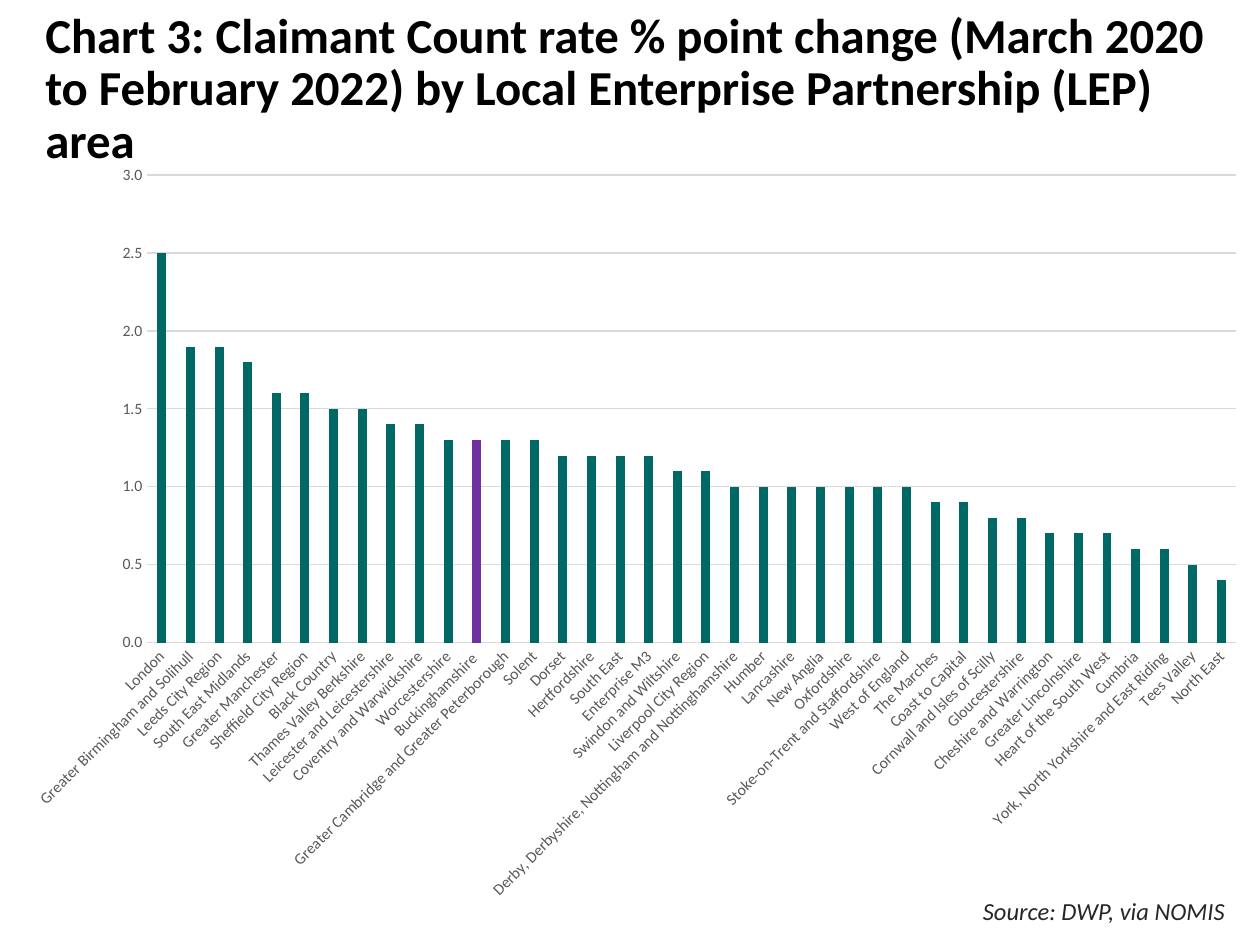
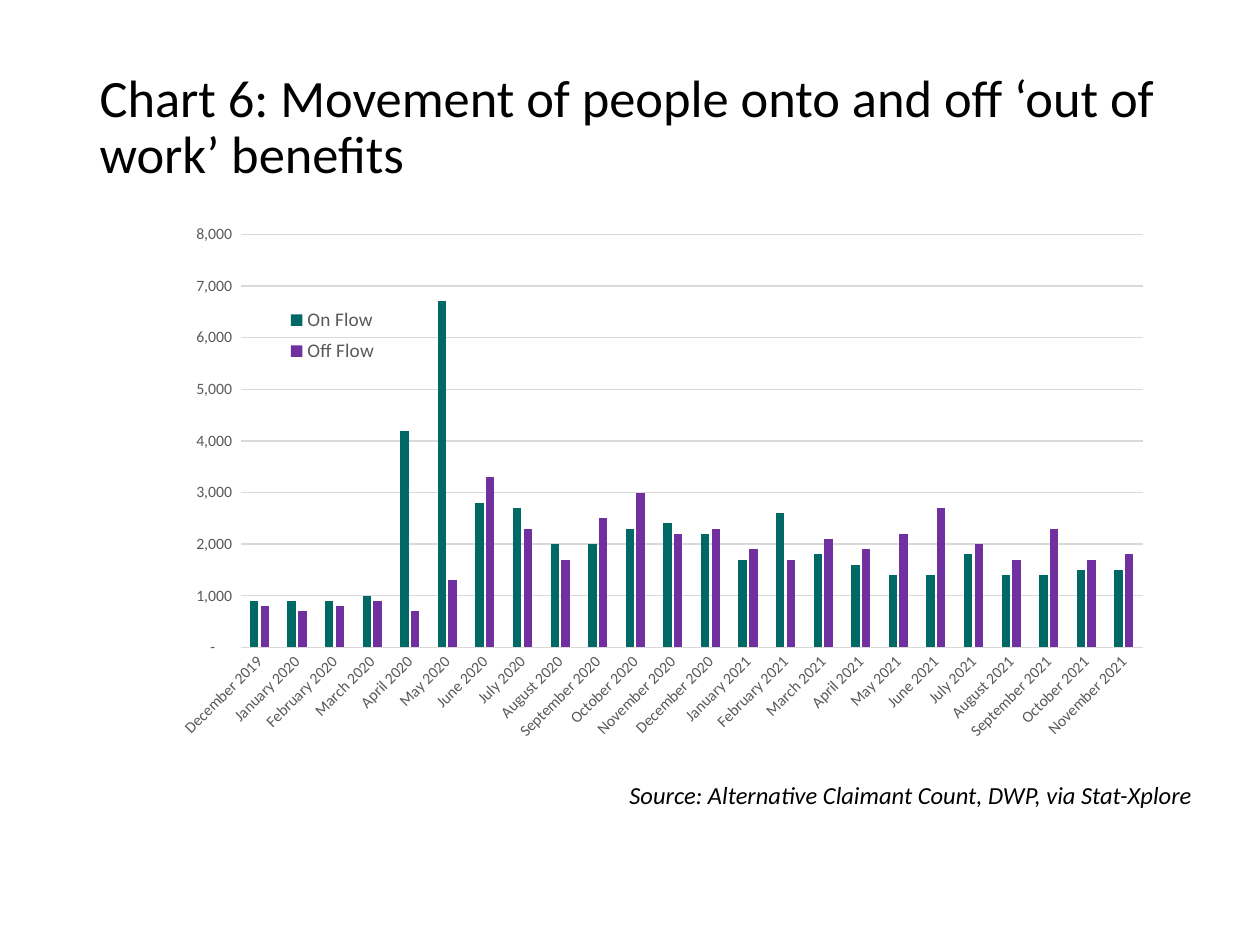
from lxml.etree import SubElement
from pptx import Presentation
from pptx.chart.data import CategoryChartData
from pptx.dml.color import RGBColor
from pptx.enum.chart import XL_CHART_TYPE, XL_LEGEND_POSITION, XL_TICK_MARK
from pptx.enum.text import MSO_ANCHOR, MSO_AUTO_SIZE, PP_ALIGN
from pptx.oxml import parse_xml
from pptx.oxml.ns import nsdecls, qn
from pptx.util import Inches, Pt

FONT = "Calibri"
COLORS = {
    "black": "000000",
    "source": "262626",
    "axis_text": "595959",
    "grid": "D9D9D9",
    "teal": "006965",
    "purple": "7030A0",
}
SERIES_COLORS = ["teal", "purple"]

AREA_RATES = {
    "London": 2.5,
    "Greater Birmingham and Solihull": 1.9,
    "Leeds City Region": 1.9,
    "South East Midlands": 1.8,
    "Greater Manchester": 1.6,
    "Sheffield City Region": 1.6,
    "Black Country": 1.5,
    "Thames Valley Berkshire": 1.5,
    "Leicester and Leicestershire": 1.4,
    "Coventry and Warwickshire": 1.4,
    "Worcestershire": 1.3,
    "Buckinghamshire ": 1.3,
    "Greater Cambridge and Greater Peterborough": 1.3,
    "Solent": 1.3,
    "Dorset": 1.2,
    "Hertfordshire": 1.2,
    "South East": 1.2,
    "Enterprise M3": 1.2,
    "Swindon and Wiltshire": 1.1,
    "Liverpool City Region": 1.1,
    "Derby, Derbyshire, Nottingham and Nottinghamshire": 1.0,
    "Humber": 1.0,
    "Lancashire": 1.0,
    "New Anglia": 1.0,
    "Oxfordshire": 1.0,
    "Stoke-on-Trent and Staffordshire": 1.0,
    "West of England": 1.0,
    "The Marches": 0.9,
    "Coast to Capital": 0.9,
    "Cornwall and Isles of Scilly": 0.8,
    "Gloucestershire": 0.8,
    "Cheshire and Warrington": 0.7,
    "Greater Lincolnshire": 0.7,
    "Heart of the South West": 0.7,
    "Cumbria": 0.6,
    "York, North Yorkshire and East Riding": 0.6,
    "Tees Valley": 0.5,
    "North East": 0.4,
}

MONTH_NAMES = ["January", "February", "March", "April", "May", "June", "July",
               "August", "September", "October", "November", "December"]
MONTHS = ["December 2019"]
MONTHS += [f"{month} {year}" for year in (2020, 2021) for month in MONTH_NAMES][:-1]
ON_FLOW = [900, 900, 900, 1000, 4200, 6700, 2800, 2700, 2000, 2000, 2300, 2400,
           2200, 1700, 2600, 1800, 1600, 1400, 1400, 1800, 1400, 1400, 1500, 1500]
OFF_FLOW = [800, 700, 800, 900, 700, 1300, 3300, 2300, 1700, 2500, 3000, 2200,
            2300, 1900, 1700, 2100, 1900, 2200, 2700, 2000, 1700, 2300, 1700, 1800]

CHART_SLIDES = [
    {
        "title": "Chart 3: Claimant Count rate % point change (March 2020 to February 2022) "
                 "by Local Enterprise Partnership (LEP) area",
        "title_box": (0.26, 0.45, 9.48, 1.02),
        "title_format": {"size": 27.9, "bold": True},
        "title_bottom": 0.54,
        "source": "Source: DWP, via NOMIS",
        "source_box": (7.44, 7.06, 2.38, 0.34),
        "source_color": "source",
        "chart_box": (0.09, 1.19, 9.91, 6.07),
        "plot_box": (1.17, 1.39, 8.64, 3.71),
        "legend_box": None,
        "categories": list(AREA_RATES),
        "series": {"Series 1": list(AREA_RATES.values())},
        "highlight": "Buckinghamshire ",
        "scale": (3, 0.5),
        "number_format": "#,##0.0",
    },
    {
        "title": "Chart 6: Movement of people onto and off ‘out of work’ benefits",
        "title_box": (0.69, 0.51, 8.62, 1.02),
        "title_format": {"size": 30},
        "title_bottom": 0.05,
        "source": "Source: Alternative Claimant Count, DWP, via Stat-Xplore",
        "source_box": (4.51, 6.14, 5.05, 0.34),
        "source_color": "black",
        "chart_box": (1.28, 1.7, 7.95, 4.61),
        "plot_box": (1.91, 1.86, 7.16, 3.28),
        "legend_box": (2.24, 2.39, 0.8, 0.55),
        "categories": MONTHS,
        "series": {"On Flow": ON_FLOW, "Off Flow": OFF_FLOW},
        "highlight": None,
        "scale": (8000, 1000),
        "number_format": '_-* #,##0_-;\\-* #,##0_-;_-* "-"??_-;_-@_',
    },
]


def write_text(text_frame, text, size, color="black", bold=False, italic=False,
               align=PP_ALIGN.LEFT, line_spacing=1.0):
    text_frame.word_wrap = True
    paragraph = text_frame.paragraphs[0]
    paragraph.alignment = align
    paragraph.line_spacing = line_spacing
    paragraph.space_before = Pt(0)
    run = paragraph.add_run()
    run.text = text
    run.font.name = FONT
    run.font.size = Pt(size)
    run.font.bold = bold
    run.font.italic = italic
    run.font.color.rgb = RGBColor.from_string(COLORS[color])


def manual_layout(box, chart_box, inner=False):
    left, top, width, height = box
    chart_left, chart_top, chart_width, chart_height = chart_box
    layout = parse_xml(f"<c:layout {nsdecls('c')}><c:manualLayout/></c:layout>")
    values = {"layoutTarget": "inner"} if inner else {}
    values.update({
        "xMode": "edge",
        "yMode": "edge",
        "x": (left - chart_left) / chart_width,
        "y": (top - chart_top) / chart_height,
        "w": width / chart_width,
        "h": height / chart_height,
    })
    for name, value in values.items():
        SubElement(layout[0], qn(f"c:{name}")).set("val", str(value))
    return layout


presentation = Presentation()
presentation.slide_width = Inches(10)
presentation.slide_height = Inches(7.5)
title_only = presentation.slide_layouts[5]

for content in CHART_SLIDES:
    slide = presentation.slides.add_slide(title_only)

    title = slide.shapes.title
    title.left, title.top, title.width, title.height = map(Inches, content["title_box"])
    title.text_frame.auto_size = MSO_AUTO_SIZE.NONE
    title.text_frame.vertical_anchor = MSO_ANCHOR.MIDDLE
    title.text_frame.margin_bottom = Inches(content["title_bottom"])
    write_text(title.text_frame, content["title"], line_spacing=0.9, **content["title_format"])

    source = slide.shapes.add_textbox(*map(Inches, content["source_box"]))
    write_text(source.text_frame, content["source"], 14, color=content["source_color"],
               italic=True, align=PP_ALIGN.RIGHT)

    chart_data = CategoryChartData()
    chart_data.categories = content["categories"]
    for name, values in content["series"].items():
        chart_data.add_series(name, values)
    chart = slide.shapes.add_chart(XL_CHART_TYPE.COLUMN_CLUSTERED,
                                   *map(Inches, content["chart_box"]), chart_data).chart
    chart.has_title = False
    chart.has_legend = content["legend_box"] is not None
    chart.font.name = FONT
    chart.font.size = Pt(10)
    chart.font.color.rgb = RGBColor.from_string(COLORS["black"])

    plot = chart.plots[0]
    plot.gap_width = 219
    plot.overlap = -27
    plot.vary_by_categories = False
    for series, color in zip(plot.series, SERIES_COLORS):
        series.invert_if_negative = False
        series.format.fill.solid()
        series.format.fill.fore_color.rgb = RGBColor.from_string(COLORS[color])
    if content["highlight"]:
        bar = plot.series[0].points[content["categories"].index(content["highlight"])]
        bar.format.fill.solid()
        bar.format.fill.fore_color.rgb = RGBColor.from_string(COLORS["purple"])

    category_axis, value_axis = chart.category_axis, chart.value_axis
    value_axis.minimum_scale = 0
    value_axis.maximum_scale, value_axis.major_unit = content["scale"]
    value_axis.tick_labels.number_format = content["number_format"]
    value_axis.tick_labels.number_format_is_linked = False
    value_axis.format.line.fill.background()
    value_axis.has_major_gridlines = True
    for line in (category_axis.format.line, value_axis.major_gridlines.format.line):
        line.width = Pt(0.75)
        line.color.rgb = RGBColor.from_string(COLORS["grid"])

    label_fonts = [(category_axis.tick_labels.font, 9), (value_axis.tick_labels.font, 9)]
    if chart.has_legend:
        chart.legend.position = XL_LEGEND_POSITION.BOTTOM
        chart.legend.include_in_layout = False
        label_fonts.append((chart.legend.font, 11))
    for font, size in label_fonts:
        font.name = FONT
        font.size = Pt(size)
        font.color.rgb = RGBColor.from_string(COLORS["axis_text"])
    for axis in (category_axis, value_axis):
        axis.major_tick_mark = XL_TICK_MARK.NONE
        axis.minor_tick_mark = XL_TICK_MARK.NONE

    chart.element.xpath(".//c:catAx/c:txPr/a:bodyPr")[0].set("rot", "-2700000")
    for layout in chart.element.xpath(".//c:plotArea/c:layout | .//c:legend/c:layout"):
        layout.getparent().remove(layout)
    plot_area = chart.element.xpath(".//c:plotArea")[0]
    plot_area.insert(0, manual_layout(content["plot_box"], content["chart_box"], inner=True))
    if chart.has_legend:
        legend_position = chart.element.xpath(".//c:legend/c:legendPos")[0]
        legend_position.addnext(manual_layout(content["legend_box"], content["chart_box"]))

presentation.save("out.pptx")
